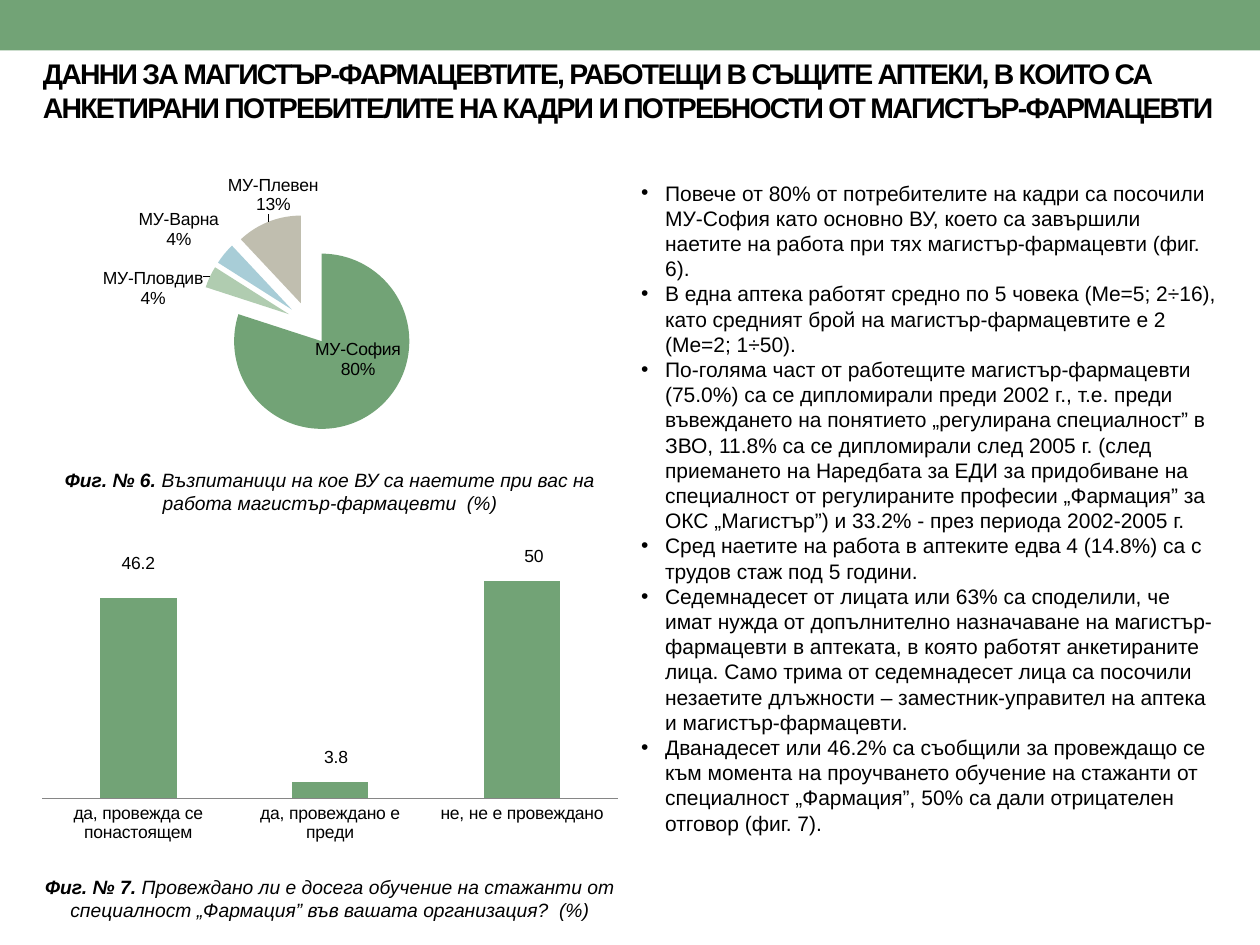
from dataclasses import dataclass

from lxml.etree import Element, SubElement
from pptx import Presentation
from pptx.chart.data import CategoryChartData
from pptx.dml.color import RGBColor
from pptx.enum.chart import XL_CHART_TYPE as ChartType
from pptx.enum.chart import XL_LABEL_POSITION as LabelPosition
from pptx.enum.chart import XL_TICK_MARK as TickMark
from pptx.enum.shapes import MSO_SHAPE as ShapeType
from pptx.enum.text import MSO_ANCHOR as Anchor
from pptx.enum.text import PP_ALIGN as Align
from pptx.oxml.ns import qn
from pptx.util import Inches, Pt


@dataclass(frozen=True)
class Theme:
    font: str = "Arial"
    text: str = "000000"
    green: str = "72A376"
    axis: str = "868686"
    slices: tuple = ("72A376", "B0CCB0", "A8CDD7", "C0BEAF")
    title_size: float = 16.2
    body_size: float = 12
    caption_size: float = 11
    label_size: float = 10


THEME = Theme()

TITLE = ("ДАННИ ЗА МАГИСТЪР-ФАРМАЦЕВТИТЕ, РАБОТЕЩИ В СЪЩИТЕ АПТЕКИ, В КОИТО СА "
         "АНКЕТИРАНИ ПОТРЕБИТЕЛИТЕ НА КАДРИ И ПОТРЕБНОСТИ ОТ МАГИСТЪР-ФАРМАЦЕВТИ")
UNIVERSITIES = {"МУ-София": 80, "МУ-Пловдив": 4, "МУ-Варна": 4, "МУ-Плевен": 12}
TRAINING = {"да, провежда се понастоящем": 46.2,
            "да, провеждано е преди": 3.8,
            "не, не е провеждано": 50}
# Label shifts as fractions of the chart size
PIE_SHIFTS = ((0.02, -0.05), (0, 0.1), (0, 0), (0.1, 0))
COLUMN_SHIFTS = ((0, -0.06), (0.01, -0.03), (0.02, -0.03))
CAPTIONS = (
    (3.67, "Фиг. № 6.", " Възпитаници на кое ВУ са наетите при вас на работа "
                        "магистър-фармацевти  (%)"),
    (6.9, "Фиг. № 7.", " Провеждано ли е досега обучение на стажанти от специалност "
                       "„Фармация” във вашата организация?  (%)"),
)
FINDINGS = (
    "Повече от 80% от потребителите на кадри са посочили МУ-София като основно ВУ, "
    "което са завършили наетите на работа при тях магистър-фармацевти (фиг. 6).",
    "В една аптека работят средно по 5 човека (Me=5; 2÷16), като средният брой на "
    "магистър-фармацевтите е 2 (Me=2; 1÷50).",
    "По-голяма част от работещите магистър-фармацевти (75.0%) са се дипломирали преди "
    "2002 г., т.е. преди въвеждането на понятието „регулирана специалност” в ЗВО, "
    "11.8% са се дипломирали след 2005 г. (след приемането на Наредбата за ЕДИ за "
    "придобиване на специалност от регулираните професии „Фармация” за ОКС „Магистър”) "
    "и 33.2% - през периода 2002-2005 г.",
    "Сред наетите на работа в аптеките едва 4 (14.8%) са с трудов стаж под 5 години.",
    "Седемнадесет от лицата или 63% са споделили, че имат нужда от допълнително "
    "назначаване на магистър-фармацевти в аптеката, в която работят анкетираните лица. "
    "Само трима от седемнадесет лица са посочили незаетите длъжности – "
    "заместник-управител на аптека и магистър-фармацевти.",
    "Дванадесет или 46.2% са съобщили за провеждащо се към момента на проучването "
    "обучение на стажанти от специалност „Фармация”, 50% са дали отрицателен отговор "
    "(фиг. 7).",
)


def style_font(font, size):
    font.name = THEME.font
    font.size = Pt(size)
    font.color.rgb = RGBColor.from_string(THEME.text)


def paint(fill, color):
    fill.solid()
    fill.fore_color.rgb = RGBColor.from_string(color)


def add_span(para, text, size, bold=False, italic=False):
    span = para.add_run()
    span.text = text
    style_font(span.font, size)
    span.font.bold = bold
    span.font.italic = italic
    return span


def add_band(page):
    band = page.shapes.add_shape(ShapeType.RECTANGLE, 0, 0, Inches(10), Inches(0.4))
    band.shadow.inherit = False
    paint(band.fill, THEME.green)
    band.line.fill.background()


def set_title(page):
    title = page.shapes.title
    title.left, title.top = Inches(0.24), Inches(0.36)
    title.width, title.height = Inches(9.53), Inches(0.71)
    title.text_frame.vertical_anchor = Anchor.MIDDLE
    para = title.text_frame.paragraphs[0]
    para.alignment = Align.LEFT
    span = add_span(para, TITLE, THEME.title_size, bold=True)
    span.font._element.set("spc", "-100")


def add_text_frame(page, left, top, width, height):
    box = page.shapes.add_textbox(Inches(left), Inches(top), Inches(width), Inches(height))
    box.text_frame.word_wrap = True
    return box.text_frame


def add_caption(page, top, number, text):
    para = add_text_frame(page, 0.12, top, 5, 0.47).paragraphs[0]
    para.alignment = Align.CENTER
    add_span(para, number, THEME.caption_size, bold=True, italic=True)
    add_span(para, text, THEME.caption_size, italic=True)


def add_findings(page):
    frame = add_text_frame(page, 4.99, 1.38, 4.78, 5.55)
    for index, text in enumerate(FINDINGS):
        para = frame.add_paragraph() if index else frame.paragraphs[0]
        add_span(para, text, THEME.body_size)
        props = para._p.get_or_add_pPr()
        props.set("marL", str(Inches(0.19)))
        props.set("indent", str(Inches(-0.19)))
        SubElement(props, qn("a:buFont"), typeface=THEME.font)
        SubElement(props, qn("a:buChar"), char="•")


def manual_layout(**values):
    layout = Element(qn("c:layout"))
    manual = SubElement(layout, qn("c:manualLayout"))
    for name, value in values.items():
        SubElement(manual, qn(f"c:{name}"), val=str(value))
    return layout


def place_plot(plot, x, y, w, h):
    area = plot._element.getparent()
    for old in area.findall(qn("c:layout")):
        area.remove(old)
    area.insert(0, manual_layout(layoutTarget="inner", xMode="edge", yMode="edge",
                                 x=x, y=y, w=w, h=h))


def shift_labels(series, shifts):
    labels = series.data_labels._element.findall(qn("c:dLbl"))
    for label, (x, y) in zip(labels, shifts):
        if x or y:
            label.find(qn("c:idx")).addnext(manual_layout(x=x, y=y))


def show_name_and_percent(labels):
    for name, value in (("showVal", 0), ("showCatName", 1), ("showPercent", 1)):
        labels.find(qn(f"c:{name}")).set("val", str(value))
    separator = Element(qn("c:separator"))
    separator.text = "\n"
    labels.find(qn("c:showBubbleSize")).addnext(separator)


def add_chart(page, kind, values, left, top, width, height):
    data = CategoryChartData()
    data.categories = list(values)
    data.add_series("Series 1", list(values.values()))
    chart = page.shapes.add_chart(kind, Inches(left), Inches(top), Inches(width),
                                  Inches(height), data).chart
    chart.has_title = chart.has_legend = False
    style_font(chart.font, 18)
    return chart


def add_university_pie(page):
    chart = add_chart(page, ChartType.PIE, UNIVERSITIES, 0.2, 1.23, 4.17, 2.76)
    plot = chart.plots[0]
    series = plot.series[0]
    place_plot(plot, 0.33, 0.17, 0.42, 0.63)
    for index, color in enumerate(THEME.slices):
        paint(series.points[index].format.fill, color)
    first_point = series._element.find(qn("c:dPt"))
    first_point.addprevious(Element(qn("c:explosion"), val="25"))

    # Labels: outside the slices, except the largest one
    labels = series.data_labels
    style_font(labels.font, THEME.label_size)
    show_name_and_percent(labels._element)
    for index in range(len(UNIVERSITIES)):
        label = series.points[index].data_label
        style_font(label.font, THEME.label_size)
        label.position = LabelPosition.OUTSIDE_END if index else LabelPosition.CENTER
    for label in labels._element.findall(qn("c:dLbl")):
        show_name_and_percent(label)
    shift_labels(series, PIE_SHIFTS)

    # The last share is stated as 13%
    frame = series.points[3].data_label.text_frame
    add_span(frame.paragraphs[0], "МУ-Плевен", THEME.label_size)
    add_span(frame.add_paragraph(), "13%", THEME.label_size)


def add_training_columns(page):
    chart = add_chart(page, ChartType.COLUMN_CLUSTERED, TRAINING, 0.24, 4.22, 4.76, 2.52)
    plot = chart.plots[0]
    series = plot.series[0]
    plot.gap_width = 150
    plot.vary_by_categories = False
    place_plot(plot, 0.02, 0.02, 0.96, 0.82)
    paint(series.format.fill, THEME.green)

    # Axes
    chart.value_axis.visible = False
    chart.value_axis.has_major_gridlines = False
    chart.value_axis.minimum_scale, chart.value_axis.maximum_scale = 0, 60
    axis = chart.category_axis
    axis.major_tick_mark = TickMark.NONE
    axis.format.line.color.rgb = RGBColor.from_string(THEME.axis)
    style_font(axis.tick_labels.font, THEME.label_size)

    # Labels, raised above the columns without leader lines
    labels = series.data_labels
    style_font(labels.font, THEME.label_size)
    labels.show_value = True
    for leader in labels._element.findall(qn("c:showLeaderLines")):
        leader.set("val", "0")
    for index in range(len(TRAINING)):
        label = series.points[index].data_label
        style_font(label.font, THEME.label_size)
        label.position = LabelPosition.OUTSIDE_END
    shift_labels(series, COLUMN_SHIFTS)


def main():
    deck = Presentation()
    deck.slide_width, deck.slide_height = Inches(10), Inches(7.5)
    page = deck.slides.add_slide(deck.slide_layouts[5])
    add_band(page)
    set_title(page)
    add_university_pie(page)
    add_training_columns(page)
    for caption in CAPTIONS:
        add_caption(page, *caption)
    add_findings(page)
    deck.save("out.pptx")


if __name__ == "__main__":
    main()
